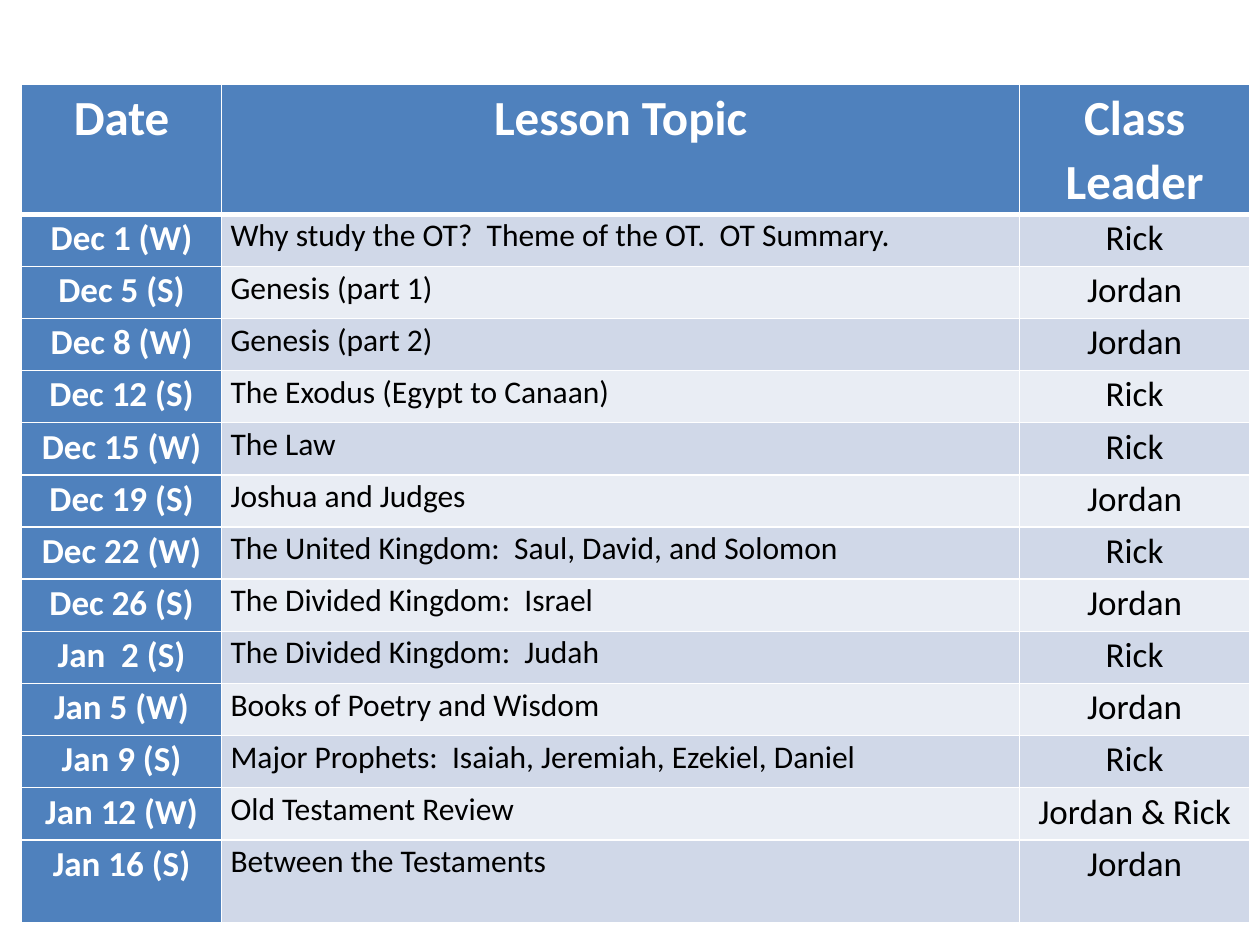
"""Build a class schedule slide with one table of dates, topics and leaders."""
from lxml.etree import SubElement
from pptx import Presentation
from pptx.dml.color import RGBColor
from pptx.enum.text import PP_ALIGN
from pptx.oxml.ns import qn
from pptx.util import Inches, Pt

HEADERS = ("Date", "Lesson Topic", "Class Leader")
LESSONS = [
    ("Dec 1 (W)", "Why study the OT?  Theme of the OT.  OT Summary.", "Rick"),
    ("Dec 5 (S)", "Genesis (part 1)", "Jordan"),
    ("Dec 8 (W)", "Genesis (part 2)", "Jordan"),
    ("Dec 12 (S)", "The Exodus (Egypt to Canaan)", "Rick"),
    ("Dec 15 (W)", "The Law", "Rick"),
    ("Dec 19 (S)", "Joshua and Judges", "Jordan"),
    ("Dec 22 (W)", "The United Kingdom:  Saul, David, and Solomon", "Rick"),
    ("Dec 26 (S)", "The Divided Kingdom:  Israel", "Jordan"),
    ("Jan  2 (S)", "The Divided Kingdom:  Judah", "Rick"),
    ("Jan 5 (W)", "Books of Poetry and Wisdom", "Jordan"),
    ("Jan 9 (S)", "Major Prophets:  Isaiah, Jeremiah, Ezekiel, Daniel", "Rick"),
    ("Jan 12 (W)", "Old Testament Review", "Jordan & Rick"),
    ("Jan 16 (S)", "Between the Testaments", "Jordan"),
]
BLUE, WHITE, BLACK = "4F81BD", "FFFFFF", "000000"
BANDS = ("D0D8E8", "E9EDF4")
LEFT, TOP, HEIGHT = 0.17, 0.67, 6.66
COL_WIDTHS = (1.59, 6.33, 1.83)
HEADER_HEIGHT, LAST_HEIGHT = 1.03, 0.66


def color(value):
    return RGBColor.from_string(value)


def set_borders(cell, **widths):
    tc_pr = cell._tc.get_or_add_tcPr()
    for side in "LRTB":
        ln = SubElement(tc_pr, qn(f"a:ln{side}"), w=str(Pt(widths.get(side, 1))))
        SubElement(SubElement(ln, qn("a:solidFill")), qn("a:srgbClr"), val=WHITE)


def write(cell, text, size=20, ink=BLACK, bold=False, align=PP_ALIGN.CENTER):
    cell.margin_left = cell.margin_right = Inches(0.07)
    cell.margin_top = cell.margin_bottom = 0
    p = cell.text_frame.paragraphs[0]
    p.alignment = align
    p.line_spacing = 1.07
    r = p.add_run()
    r.text = text
    r.font.name = "Calibri"
    r.font.size = Pt(size)
    r.font.bold = bold
    r.font.color.rgb = color(ink)


def fill_cell(cell, value):
    cell.fill.solid()
    cell.fill.fore_color.rgb = color(value)


def main():
    prs = Presentation()
    prs.slide_width, prs.slide_height = Inches(10), Inches(7.5)
    s = prs.slides.add_slide(prs.slide_layouts[6])

    table = s.shapes.add_table(
        len(LESSONS) + 1, len(HEADERS), Inches(LEFT), Inches(TOP),
        Inches(sum(COL_WIDTHS)), Inches(HEIGHT)).table
    for column, width in zip(table.columns, COL_WIDTHS):
        column.width = Inches(width)
    middle = len(LESSONS) - 1
    lesson_height = (HEIGHT - HEADER_HEIGHT - LAST_HEIGHT) / middle
    heights = [HEADER_HEIGHT] + [lesson_height] * middle + [LAST_HEIGHT]
    for row, height in zip(table.rows, heights):
        row.height = Inches(height)

    for col, text in enumerate(HEADERS):
        cell = table.cell(0, col)
        write(cell, text, size=28, ink=WHITE, bold=True)
        set_borders(cell, B=3)
        fill_cell(cell, BLUE)

    styles = (
        dict(ink=WHITE, bold=True),
        dict(size=18, align=PP_ALIGN.LEFT),
        dict(),
    )
    for i, lesson in enumerate(LESSONS):
        for col, (text, style) in enumerate(zip(lesson, styles)):
            cell = table.cell(i + 1, col)
            write(cell, text, **style)
            set_borders(cell, T=3 if i == 0 else 1)
            fill_cell(cell, BLUE if col == 0 else BANDS[i % 2])

    prs.save("out.pptx")


if __name__ == "__main__":
    main()
